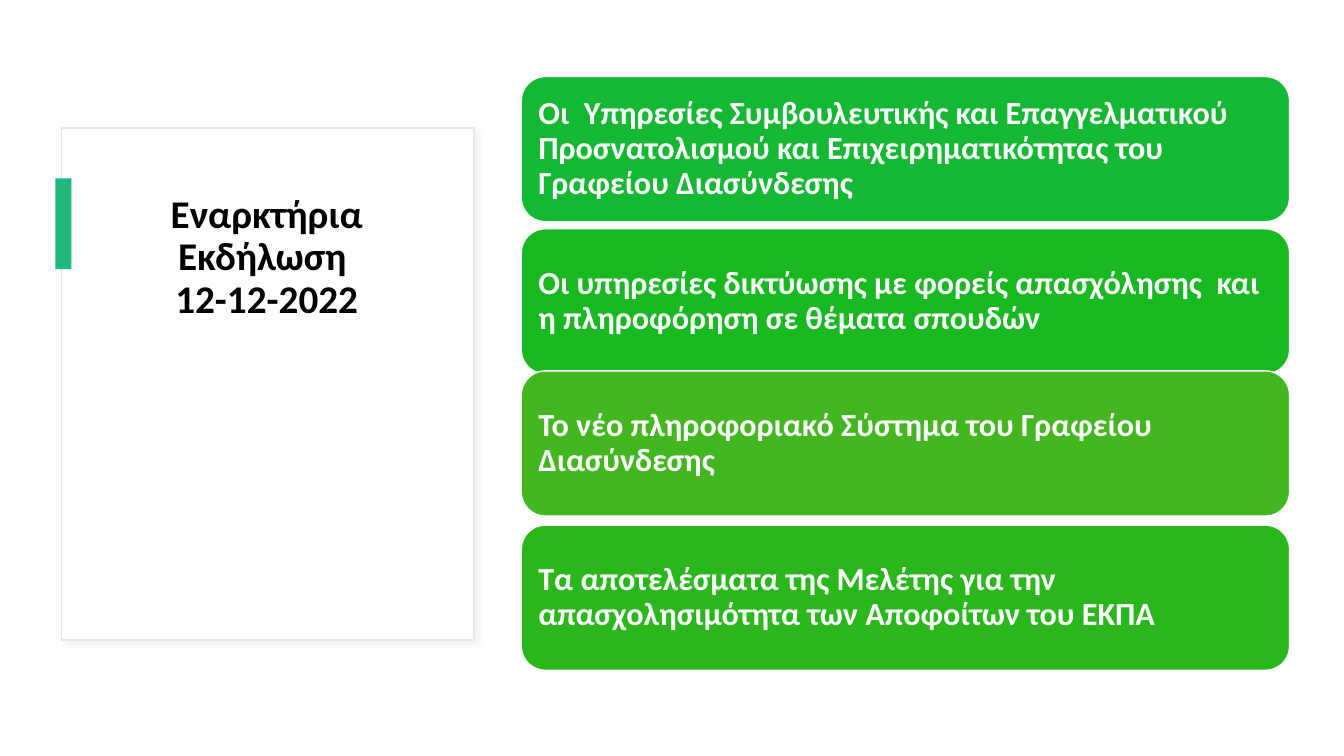
import pptx
import pptx.util
import pptx.dml.color
import pptx.enum.shapes
import pptx.enum.text
import pptx.oxml
import pptx.oxml.ns
from dataclasses import dataclass

Inches = pptx.util.Inches
Kind = pptx.enum.shapes.MSO_SHAPE
Anchor = pptx.enum.text.MSO_ANCHOR
Align = pptx.enum.text.PP_ALIGN


@dataclass(frozen=True)
class Theme:
    font: str = "Calibri"
    head: int = 28
    body: int = 23
    dark: str = "000000"
    white: str = "FFFFFF"
    edge: str = "E5E6F0"
    shade: str = "D9D9D9"
    accent: str = "21B87C"


THEME = Theme()
TITLE = "Εναρκτήρια Εκδήλωση \v12-12-2022"
CARDS = [
    (0, "14B833", "Οι  Υπηρεσίες Συμβουλευτικής και Επαγγελματικού "
     "Προσνατολισμού και Επιχειρηματικότητας του Γραφείου Διασύνδεσης"),
    (1.51, "18B820", "Οι υπηρεσίες δικτύωσης με φορείς απασχόλησης  και "
     "η πληροφόρηση σε θέματα σπουδών"),
    (2.92, "43B720", "Το νέο πληροφοριακό Σύστημα του Γραφείου Διασύνδεσης"),
    (4.45, "2AB71C", "Τα αποτελέσματα της Μελέτης για την "
     "απασχολησιμότητα των Αποφοίτων του ΕΚΠΑ"),
]


def color(code):
    return pptx.dml.color.RGBColor.from_string(code)


def assign(target, values):
    for name, value in values.items():
        setattr(target, name, value)


def block(slide, kind, box, fill, line=None):
    shape = slide.shapes.add_shape(kind, *map(Inches, box))
    shape.shadow.inherit = False
    shape.fill.solid()
    shape.fill.fore_color.rgb = color(fill)
    if line:
        shape.line.color.rgb = color(line)
        shape.line.width = pptx.util.Pt(1)
    else:
        shape.line.fill.background()
    return shape


def write(shape, text, size, ink, align, frame):
    body = shape.text_frame
    body.text = text
    assign(body, {"word_wrap": True, "auto_size": pptx.enum.text.MSO_AUTO_SIZE.NONE, **frame})
    para = body.paragraphs[0]
    assign(para, {"alignment": align, "line_spacing": 0.9})
    for run in para.runs:
        assign(run.font, {"name": THEME.font, "size": pptx.util.Pt(size), "bold": True})
        run.font.color.rgb = color(ink)


def shade(shape):
    effects = shape.element.spPr.find(pptx.oxml.ns.qn("a:effectLst"))
    effects.append(pptx.oxml.parse_xml(
        f'<a:outerShdw {pptx.oxml.ns.nsdecls("a")} blurRad="50800" dist="38100" '
        f'dir="2700000" algn="tl" rotWithShape="0"><a:srgbClr val="{THEME.shade}">'
        '<a:alpha val="30000"/></a:srgbClr></a:outerShdw>'))


def panel(slide, box):
    left, top, width, height = box
    title = slide.shapes.title
    back = block(slide, Kind.RECTANGLE, box, THEME.white, THEME.edge)
    shade(back)
    title.element.addprevious(back.element)
    place = {"left": left + 0.34, "top": top + 0.61,
             "width": width - 0.7, "height": height - 1.23}
    assign(title, {name: Inches(value) for name, value in place.items()})
    write(title, TITLE, THEME.head, THEME.dark, Align.CENTER, {"vertical_anchor": Anchor.TOP})
    block(slide, Kind.RECTANGLE, (left - 0.06, top + 0.5, 0.16, 0.9), THEME.accent)


def stack(slide, box):
    left, top, width, height = box
    sides = ("margin_left", "margin_top", "margin_right", "margin_bottom")
    frame = {side: Inches(0.1) for side in sides}
    frame["vertical_anchor"] = Anchor.MIDDLE
    for drop, fill, text in CARDS:
        card = block(slide, Kind.ROUNDED_RECTANGLE,
                     (left, top + drop, width, height), fill, THEME.white)
        write(card, text, THEME.body, THEME.white, Align.LEFT, frame)


def main():
    deck = pptx.Presentation()
    assign(deck, {"slide_width": Inches(13.33), "slide_height": Inches(7.5)})
    slide = deck.slides.add_slide(deck.slide_layouts[5])
    panel(slide, (0.61, 1.27, 4.09, 5.08))
    stack(slide, (5.17, 0.76, 7.62, 1.44))
    deck.save("out.pptx")


if __name__ == "__main__":
    main()
